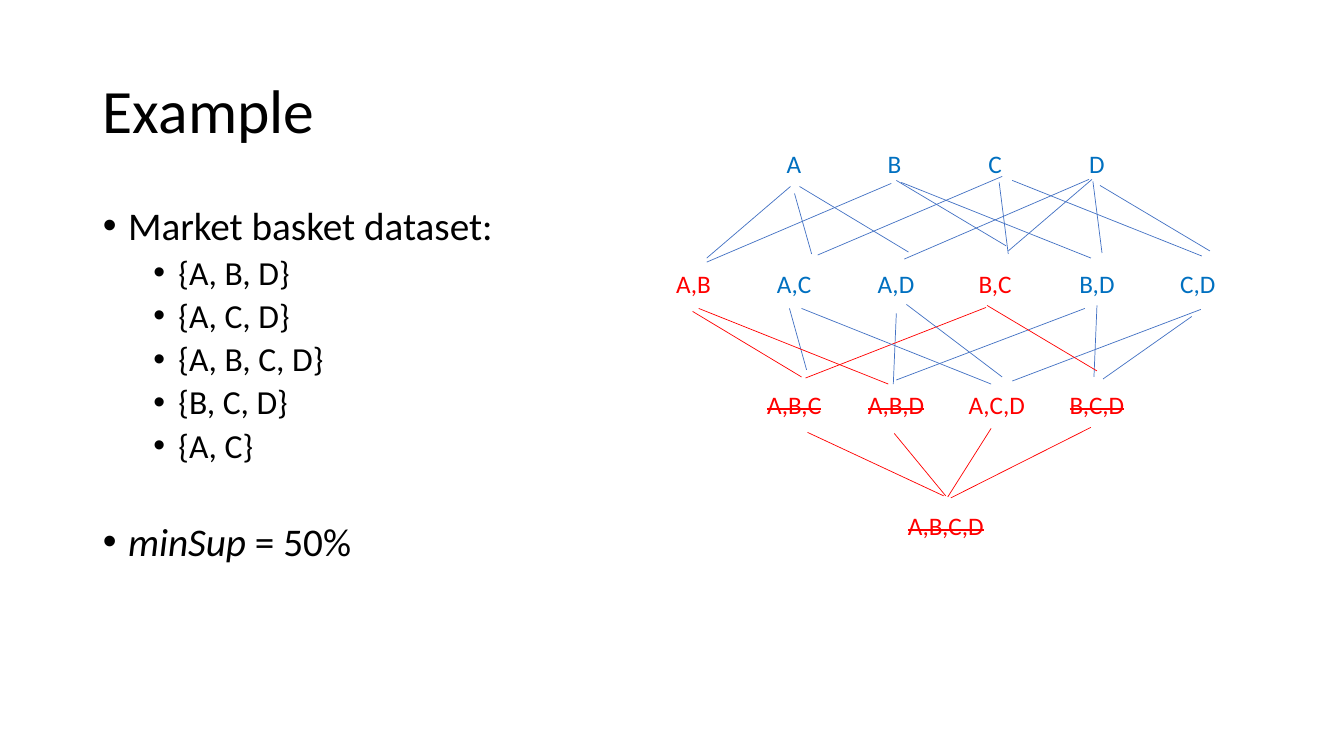
from dataclasses import dataclass

from lxml.etree import SubElement
from pptx import Presentation
from pptx.dml.color import RGBColor
from pptx.enum.shapes import MSO_CONNECTOR
from pptx.enum.text import MSO_ANCHOR, MSO_AUTO_SIZE, PP_ALIGN
from pptx.oxml.ns import qn
from pptx.util import Inches, Pt


@dataclass(frozen=True)
class Theme:
    font: str = "Calibri"
    text: str = "000000"
    frequent: str = "0070C0"
    infrequent: str = "FF0000"
    link: str = "4472C4"
    title_size: int = 44
    body_size: int = 28
    item_size: int = 24
    label_size: int = 18
    line_width: float = 0.5


THEME = Theme()


@dataclass(frozen=True)
class Bullet:
    runs: tuple[tuple[str, bool], ...]  # text, italic
    level: int = 0
    space_before: float = 10


@dataclass(frozen=True)
class ItemSet:
    label: str
    color: str = THEME.frequent
    pruned: bool = False


@dataclass(frozen=True)
class Edge:
    start: tuple[float, float]
    end: tuple[float, float]
    color: str = THEME.link


RED = THEME.infrequent
TRANSACTIONS = ("{A, B, D}", "{A, C, D}", "{A, B, C, D}", "{B, C, D}", "{A, C}")
BULLETS = (
    Bullet((("Market basket dataset:", False),)),
    *(Bullet(((items, False),), 1, 5) for items in TRANSACTIONS),
    Bullet((("minSup ", True), ("= 50%", False)), space_before=41),
)
LATTICE = (
    tuple(ItemSet(item) for item in "ABCD"),
    (ItemSet("A,B", RED), ItemSet("A,C"), ItemSet("A,D"),
     ItemSet("B,C", RED), ItemSet("B,D"), ItemSet("C,D")),
    (ItemSet("A,B,C", RED, True), ItemSet("A,B,D", RED, True),
     ItemSet("A,C,D", RED), ItemSet("B,C,D", RED, True)),
    (ItemSet("A,B,C,D", RED, True),),
)
EDGES = (
    # Single items to pairs
    Edge((7.84, 1.85), (7.01, 2.56)),
    Edge((8.84, 1.82), (7.01, 2.6)),
    Edge((7.88, 1.92), (8.05, 2.52)),
    Edge((7.93, 1.85), (9.01, 2.5)),
    Edge((10.83, 1.78), (10, 2.49)),
    Edge((9.94, 1.75), (8.11, 2.53)),
    Edge((10.8, 1.78), (8.97, 2.57)),
    Edge((10.91, 1.84), (12, 2.49)),
    Edge((8.89, 1.79), (9.98, 2.44)),
    Edge((9.91, 1.81), (10, 2.52)),
    Edge((8.94, 1.81), (10.82, 2.56)),
    Edge((10.84, 1.8), (10.93, 2.51)),
    Edge((10.04, 1.79), (11.92, 2.54)),
    # Pairs to triples
    Edge((7.83, 3.06), (8, 3.67)),
    Edge((6.87, 3.09), (7.95, 3.74), RED),
    Edge((6.93, 3.06), (8.81, 3.81), RED),
    Edge((8.89, 3.11), (8.86, 3.81)),
    Edge((8.89, 3.77), (10.76, 3.06)),
    Edge((9.78, 3.05), (7.99, 3.75), RED),
    Edge((10.04, 3.78), (11.91, 3.07)),
    Edge((10.94, 3.76), (11.82, 3.14)),
    Edge((10.88, 3.03), (10.85, 3.74)),
    Edge((9.79, 3.03), (10.88, 3.68), RED),
    Edge((8.99, 3.02), (9.94, 3.74)),
    Edge((7.95, 3.06), (9.83, 3.81)),
    # Triples to the full set
    Edge((9.83, 4.25), (9.4, 4.93), RED),
    Edge((8.01, 4.29), (9.36, 4.92), RED),
    Edge((8.87, 4.3), (9.38, 4.92), RED),
    Edge((10.82, 4.24), (9.43, 4.94), RED),
)
ROW_GAP = 64.6  # points between lattice rows
COLUMN_PITCH = 1  # inches between lattice labels


def add_text(paragraph, text: str, *, size: float, color: str = THEME.text,
             italic: bool = False, strike: bool = False) -> None:
    run = paragraph.add_run()
    run.text = text
    run.font.name = THEME.font
    run.font.size = Pt(size)
    run.font.italic = italic
    run.font.color.rgb = RGBColor.from_string(color)
    if strike:
        run._r.get_or_add_rPr().set("strike", "sngStrike")


def place(shape, left: float, top: float, width: float, height: float) -> None:
    shape.left, shape.top = Inches(left), Inches(top)
    shape.width, shape.height = Inches(width), Inches(height)


def next_paragraph(text_frame, index: int):
    return text_frame.add_paragraph() if index else text_frame.paragraphs[0]


def add_title(slide, text: str) -> None:
    title = slide.shapes.title
    place(title, 0.92, 0.4, 11.5, 1.45)
    title.text_frame.vertical_anchor = MSO_ANCHOR.MIDDLE
    title.text_frame.auto_size = MSO_AUTO_SIZE.NONE
    paragraph = title.text_frame.paragraphs[0]
    paragraph.alignment = PP_ALIGN.LEFT
    paragraph.line_spacing = 0.9
    add_text(paragraph, text, size=THEME.title_size)


def add_bullets(slide, bullets: tuple[Bullet, ...]) -> None:
    body = slide.placeholders[1]
    place(body, 0.92, 2, 11.5, 4.76)
    body.text_frame.auto_size = MSO_AUTO_SIZE.NONE
    for index, bullet in enumerate(bullets):
        paragraph = next_paragraph(body.text_frame, index)
        paragraph.level = bullet.level
        paragraph.line_spacing = 0.9
        paragraph.space_before = Pt(bullet.space_before)
        properties = paragraph._p.get_or_add_pPr()
        properties.set("marL", str(Inches(0.25 + 0.5 * bullet.level)))
        properties.set("indent", str(Inches(-0.25)))
        SubElement(properties, qn("a:buFont")).set("typeface", "Arial")
        SubElement(properties, qn("a:buChar")).set("char", "•")
        size = THEME.item_size if bullet.level else THEME.body_size
        for text, italic in bullet.runs:
            add_text(paragraph, text, size=size, italic=italic)


def add_tab_stops(paragraph, count: int) -> None:
    stops = SubElement(paragraph._p.get_or_add_pPr(), qn("a:tabLst"))
    for number in range(1, count + 1):
        stop = SubElement(stops, qn("a:tab"))
        stop.set("pos", str(Inches(number * COLUMN_PITCH)))
        stop.set("algn", "l")


def add_lattice(slide, rows: tuple[tuple[ItemSet, ...], ...]) -> None:
    box = slide.shapes.add_textbox(Inches(6.58), Inches(1.42), Inches(5.6), Inches(4.34))
    box.text_frame.word_wrap = False
    box.text_frame.auto_size = MSO_AUTO_SIZE.SHAPE_TO_FIT_TEXT
    for index, row in enumerate(rows):
        paragraph = next_paragraph(box.text_frame, index)
        paragraph.alignment = PP_ALIGN.CENTER
        paragraph.space_before = Pt(ROW_GAP if index else 0)
        if len(row) > 1:
            add_tab_stops(paragraph, len(row) - 1)
        for column, item_set in enumerate(row):
            if column:
                add_text(paragraph, "\t", size=THEME.label_size)
            add_text(paragraph, item_set.label, size=THEME.label_size,
                     color=item_set.color, strike=item_set.pruned)


def add_edge(slide, edge: Edge) -> None:
    points = (Inches(value) for value in (*edge.start, *edge.end))
    connector = slide.shapes.add_connector(MSO_CONNECTOR.STRAIGHT, *points)
    connector.line.color.rgb = RGBColor.from_string(edge.color)
    connector.line.width = Pt(THEME.line_width)
    SubElement(connector._element.spPr, qn("a:effectLst"))


def main() -> None:
    presentation = Presentation()
    presentation.slide_width = Inches(13.33)
    presentation.slide_height = Inches(7.5)
    slide = presentation.slides.add_slide(presentation.slide_layouts[1])
    add_title(slide, "Example")
    add_bullets(slide, BULLETS)
    add_lattice(slide, LATTICE)
    for edge in EDGES:
        add_edge(slide, edge)
    presentation.save("out.pptx")


if __name__ == "__main__":
    main()
